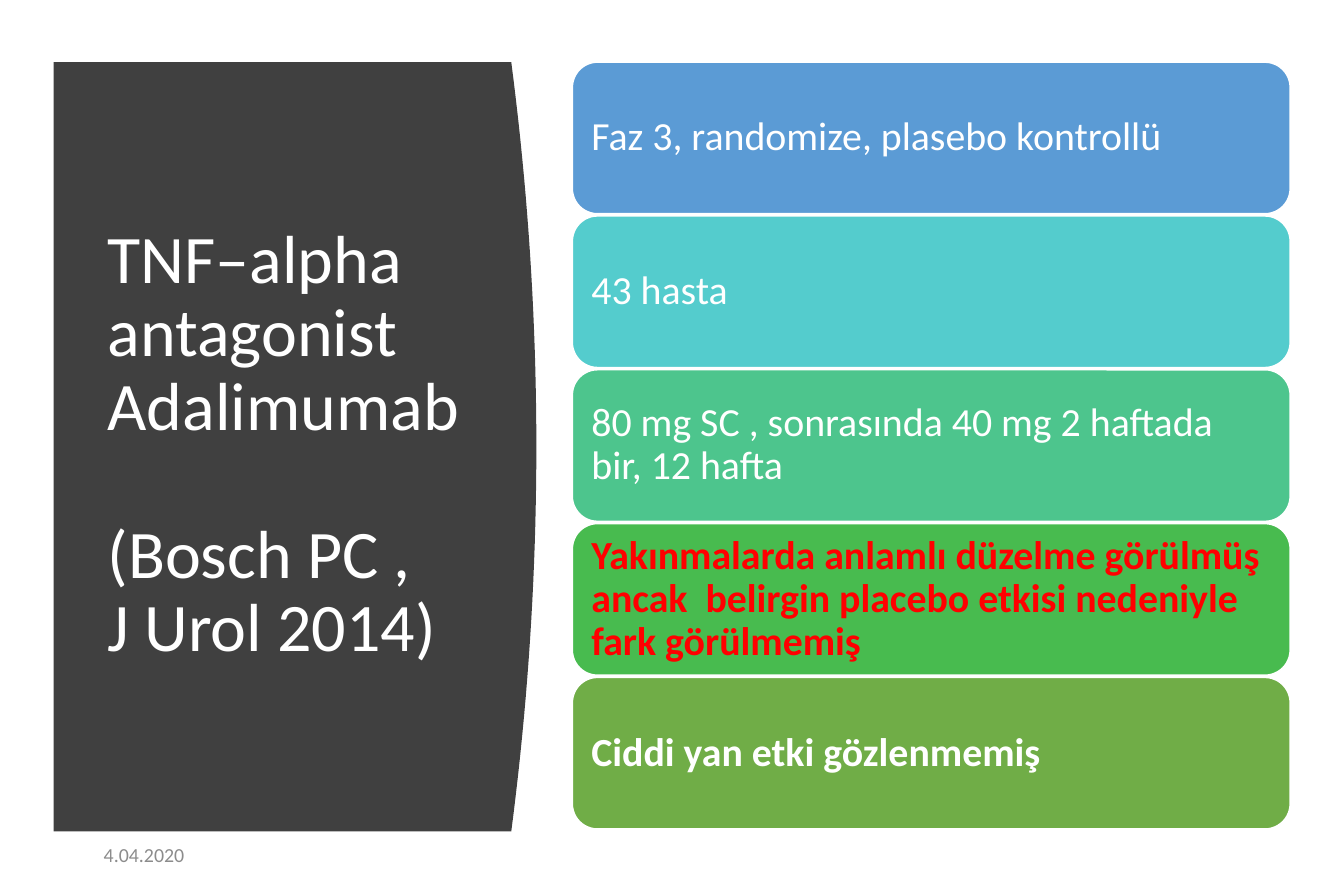
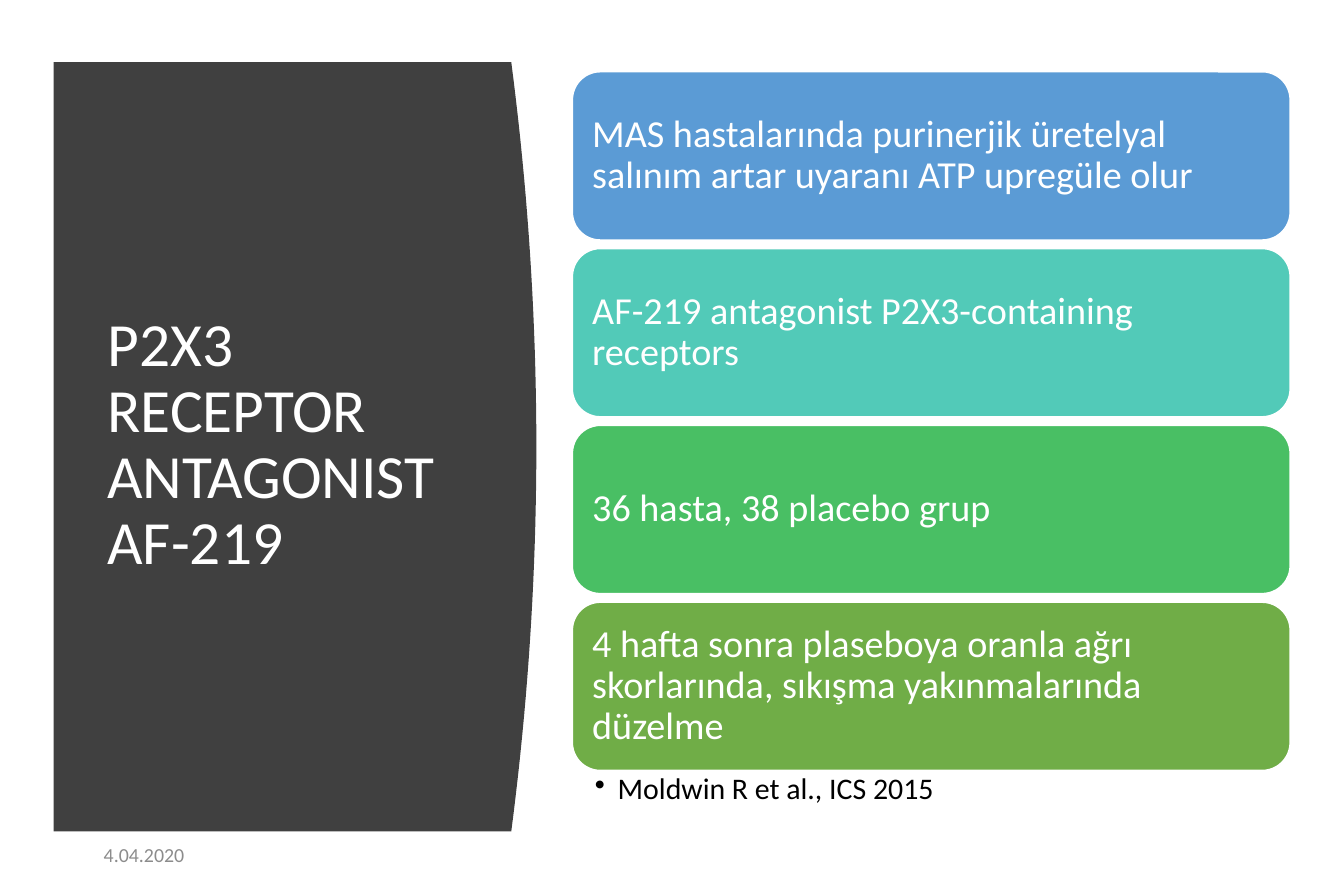
from dataclasses import dataclass

from lxml import etree
from pptx import Presentation, util as u
from pptx.dml.color import RGBColor
from pptx.enum import shapes, text
from pptx.oxml.ns import qn

PX = u.Inches(0.01)  # 100 px to the inch


@dataclass(frozen=True)
class Theme:
    font: str = "Calibri"
    panel: str = "404040"
    white: str = "FFFFFF"
    alert: str = "FF0000"
    muted: str = "8C8C8C"
    black: str = "000000"
    note: int = 18
    date: int = 12
    lead: float = 0.9


T = Theme()
DATE = "4.04.2020"

# Content: cards hold (text, fill, text colour, bold)
SLIDES = [
    dict(
        title=["TNF–alpha antagonist Adalimumab", "(Bosch PC ,\vJ Urol 2014)"],
        size=41, top=52, bottom=694, high=127, body=24,
        cards=[
            ("Faz 3, randomize, plasebo kontrollü", "5B9BD5", T.white, False),
            ("43 hasta", "54CCCD", T.white, False),
            ("80 mg SC , sonrasında 40 mg 2 haftada bir, 12 hafta",
             "4DC58D", T.white, False),
            ("Yakınmalarda anlamlı düzelme görülmüş ancak  belirgin placebo "
             "etkisi nedeniyle fark görülmemiş", "48BB4F", T.alert, True),
            ("Ciddi yan etki gözlenmemiş", "70AD47", T.white, True),
        ],
        note=None,
    ),
    dict(
        title=["P2X3 RECEPTOR ANTAGONIST AF-219"],
        size=37, top=60, bottom=645, high=141, body=23,
        cards=[
            ("MAS hastalarında purinerjik üretelyal salınım artar uyaranı ATP "
             "upregüle olur", "5B9BD5", T.white, False),
            ("AF-219 antagonist P2X3-containing receptors",
             "52CAB8", T.white, False),
            ("36 hasta, 38 placebo grup", "49BF64", T.white, False),
            ("4 hafta sonra plaseboya oranla ağrı skorlarında, sıkışma "
             "yakınmalarında düzelme", "70AD47", T.white, False),
        ],
        note="Moldwin R et al., ICS 2015",
    ),
]

# Layout in px: left, top, width, height
PANEL = (45, 52, 404, 644)
BULGE = 21
TITLE = (80, 111, 315, 524)
CARD_X, CARD_W = 479, 601
NOTE_H = 42
FOOT = (77, 695, 253, 40)


def emu(*vals):
    return [round(v * PX) for v in vals]


def rgb(code):
    return RGBColor.from_string(code)


def style(para, size, color, bold=False, lead=T.lead):
    para.alignment = text.PP_ALIGN.LEFT
    para.line_spacing = lead
    font = para.font
    font.name, font.size, font.bold = T.font, u.Pt(size), bold
    font.color.rgb = rgb(color)


def setup(frame, pad=(10, 5, 10, 5), anchor=text.MSO_ANCHOR.MIDDLE):
    frame.word_wrap = True
    frame.auto_size = text.MSO_AUTO_SIZE.NONE
    frame.vertical_anchor = anchor
    (frame.margin_left, frame.margin_top,
     frame.margin_right, frame.margin_bottom) = emu(*pad)


def add_panel(slide):
    # The right edge is a parabola, widest at mid height
    left, top, wide, high = PANEL
    edge = left + wide
    steps = [i / 20 for i in range(-20, 21)]
    curve = [(edge - BULGE * s * s, top + high * (1 + s) / 2) for s in steps]
    pen = slide.shapes.build_freeform(*emu(left, top))
    pen.add_line_segments([emu(*pt) for pt in curve + [(left, top + high)]])
    panel = pen.convert_to_shape()
    panel.shadow.inherit = False
    panel.fill.solid()
    panel.fill.fore_color.rgb = rgb(T.panel)
    panel.line.fill.background()


def set_title(slide, lines, size):
    title = slide.shapes.title
    title.left, title.top, title.width, title.height = emu(*TITLE)
    # Bring the title in front of the panel
    slide.shapes._spTree.append(title._element)
    frame = title.text_frame
    setup(frame)
    for i, line in enumerate(lines):
        para = frame.paragraphs[0] if i == 0 else frame.add_paragraph()
        para.text = line
        para.space_before = u.Pt(size * 1.1 if i else 0)
        style(para, size, T.white)


def add_cards(slide, spec):
    cards, high = spec["cards"], spec["high"]
    pitch = (spec["bottom"] - spec["top"] - high) / (len(cards) - 1)
    for i, (words, fill, color, bold) in enumerate(cards):
        card = slide.shapes.add_shape(
            shapes.MSO_SHAPE.ROUNDED_RECTANGLE,
            *emu(CARD_X, spec["top"] + i * pitch, CARD_W, high))
        card.shadow.inherit = False
        card.fill.solid()
        card.fill.fore_color.rgb = rgb(fill)
        card.line.color.rgb = rgb(T.white)
        card.line.width = u.Pt(1)
        setup(card.text_frame, (10, 10, 10, 10))
        para = card.text_frame.paragraphs[0]
        para.text = words
        style(para, spec["body"], color, bold)


def add_text(slide, box, words, **kw):
    frame = slide.shapes.add_textbox(*emu(*box)).text_frame
    setup(frame, **kw)
    para = frame.paragraphs[0]
    para.text = words
    return para


def add_note(slide, words, top):
    para = add_text(slide, (CARD_X, top, CARD_W, NOTE_H), words,
                    pad=(19, 3, 18, 3), anchor=text.MSO_ANCHOR.TOP)
    props = para._p.get_or_add_pPr()
    indent = emu(19)[0]
    props.set("marL", str(indent))
    props.set("indent", str(-indent))
    etree.SubElement(props, qn("a:buChar"), char="•")
    style(para, T.note, T.black)


def main():
    deck = Presentation()
    deck.slide_width, deck.slide_height = emu(1125, 750)
    for spec in SLIDES:
        slide = deck.slides.add_slide(deck.slide_layouts[5])
        add_panel(slide)
        set_title(slide, spec["title"], spec["size"])
        add_cards(slide, spec)
        if spec["note"]:
            add_note(slide, spec["note"], spec["bottom"])
        # Date line
        style(add_text(slide, FOOT, DATE), T.date, T.muted, lead=1.0)
    deck.save("out.pptx")


if __name__ == "__main__":
    main()
